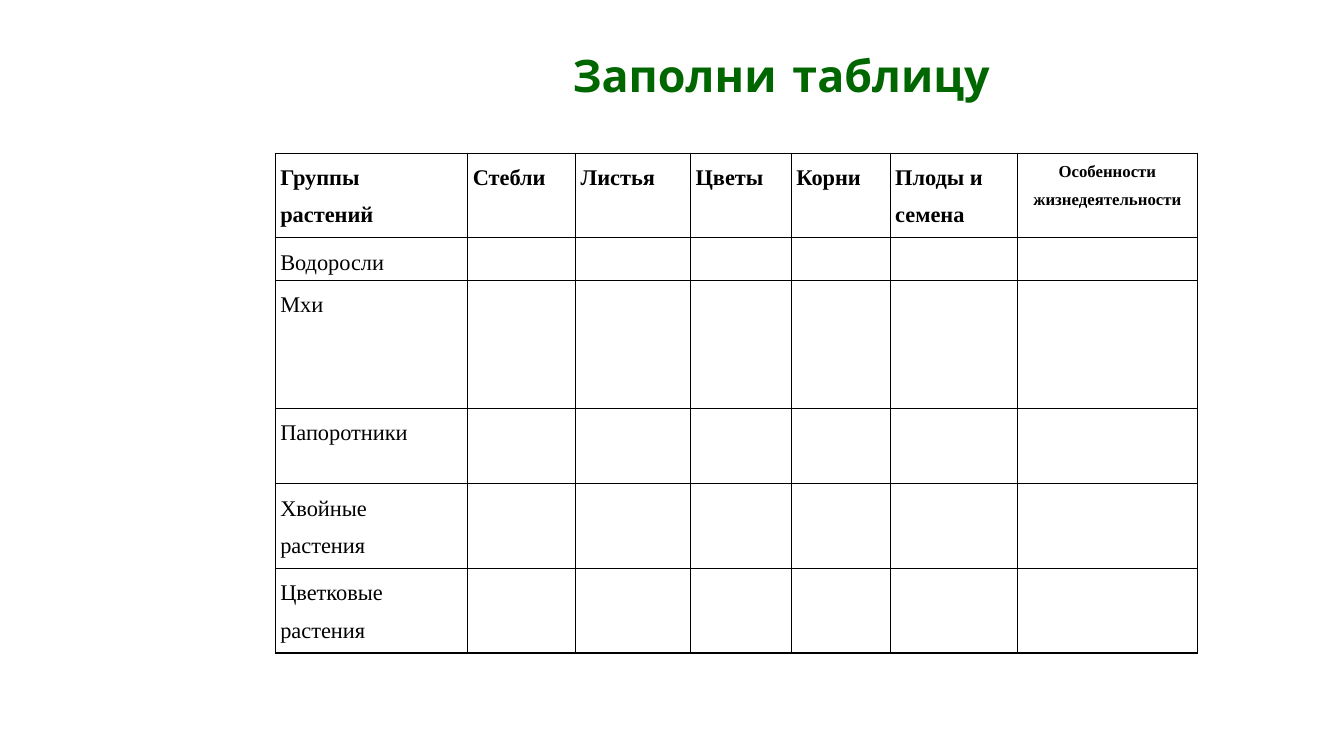
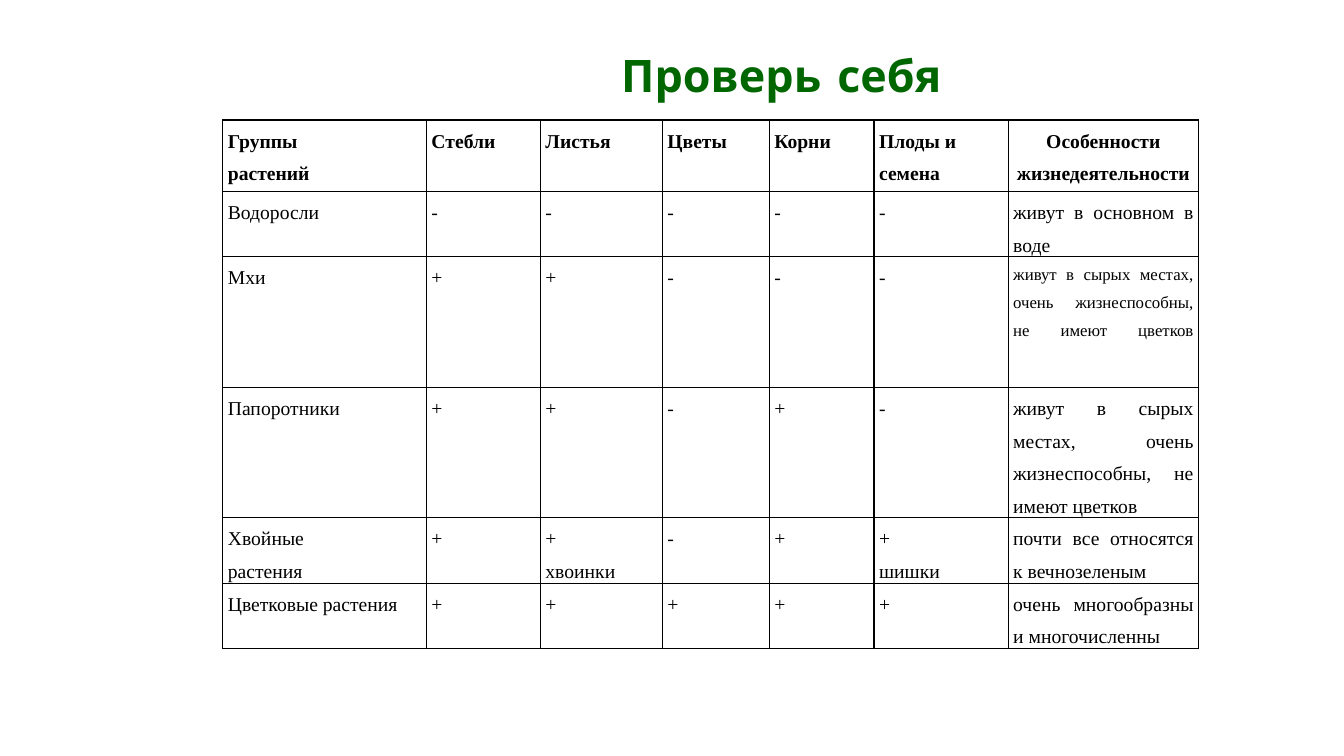
from lxml import etree
from pptx import Presentation
from pptx.dml.color import RGBColor
from pptx.enum.text import MSO_ANCHOR, MSO_AUTO_SIZE, PP_ALIGN
from pptx.oxml.ns import qn
from pptx.util import Inches, Pt

HEADINGS = ["Группы\nрастений", "Стебли", "Листья", "Цветы", "Корни",
            "Плоды и\nсемена", "Особенности жизнедеятельности"]
GROUPS = ["Водоросли", "Мхи", "Папоротники", "Хвойные\nрастения",
          "Цветковые растения"]
DAMP_PLACES = "живут в сырых местах, очень жизнеспособны, не имеют цветков"
ANSWERS = [
    ["-", "-", "-", "-", "-", "живут в основном в воде"],
    # The closing line break justifies the last line too
    ["+", "+", "-", "-", "-", DAMP_PLACES + "\v"],
    ["+", "+", "-", "+", "-", DAMP_PLACES],
    ["+", "+\nхвоинки", "-", "+", "+\nшишки",
     "почти все относятся к вечнозеленым"],
    ["+", "+", "+", "+", "+", "очень многообразны и многочисленны"],
]


def color(value):
    return RGBColor.from_string(value)


class Deck:
    """Holds the shared style and the current slide."""

    TITLE_FONT, TITLE_COLOR, TITLE_SIZE = "Comic Neue", "006600", 32
    TABLE_FONT, TEXT_COLOR, BORDER_COLOR = "Times New Roman", "000000", "000001"
    BACKGROUND = "FFFFFF"

    def __init__(self):
        self.presentation = Presentation()
        self.presentation.slide_width = Inches(13.33)
        self.presentation.slide_height = Inches(7.5)
        background = self.presentation.slide_master.background.fill
        background.solid()
        background.fore_color.rgb = color(self.BACKGROUND)
        self.slide = None

    def add_slide(self, title):
        layout = self.presentation.slide_layouts[5]
        self.slide = self.presentation.slides.add_slide(layout)
        self.place_title(title)

    def set_font(self, paragraph, name, size, rgb, bold):
        font = paragraph.font
        font.name, font.size, font.bold = name, Pt(size), bold
        font.color.rgb = color(rgb)

    def place_title(self, text):
        shape = self.slide.shapes.title
        shape.left, shape.top = Inches(4.13), Inches(0.45)
        shape.width, shape.height = Inches(7.24), Inches(0.98)
        frame = shape.text_frame
        frame.text = text
        frame.word_wrap = True
        frame.auto_size = MSO_AUTO_SIZE.NONE
        frame.vertical_anchor = MSO_ANCHOR.TOP
        frame.margin_top = Inches(0.02)
        paragraph = frame.paragraphs[0]
        paragraph.alignment = PP_ALIGN.CENTER
        self.set_font(paragraph, self.TITLE_FONT, self.TITLE_SIZE,
                      self.TITLE_COLOR, True)

    def add_table(self, left, top, widths, heights, rows, size, small_cells):
        """Draw a grid; small_cells lists the (row, column) set in 12 pt."""
        frame = self.slide.shapes.add_table(
            len(heights), len(widths), Inches(left), Inches(top),
            Inches(sum(widths)), Inches(sum(heights)))
        table = frame.table
        table.first_row = table.horz_banding = False
        for column, width in zip(table.columns, widths):
            column.width = Inches(width)
        for row, height in zip(table.rows, heights):
            row.height = Inches(height)
        for row_index, texts in enumerate(rows):
            for column_index, text in enumerate(texts):
                position = (row_index, column_index)
                self.fill_cell(table.cell(*position), text,
                               12 if position in small_cells else size,
                               heading=row_index == 0,
                               centered=position == (0, len(widths) - 1))

    def fill_cell(self, cell, text, size, heading, centered):
        cell.margin_left = cell.margin_right = Inches(0.05)
        cell.margin_top = cell.margin_bottom = 0
        self.add_borders(cell)
        cell.fill.background()
        if not text:
            return
        cell.text_frame.text = text
        for paragraph in cell.text_frame.paragraphs:
            paragraph.alignment = (PP_ALIGN.CENTER if centered
                                   else PP_ALIGN.JUSTIFY)
            paragraph.line_spacing = 1.5
            self.set_font(paragraph, self.TABLE_FONT, size,
                          self.TEXT_COLOR, heading)

    def add_borders(self, cell):
        properties = cell._tc.get_or_add_tcPr()
        for side in ("a:lnL", "a:lnR", "a:lnT", "a:lnB"):
            line = etree.SubElement(properties, qn(side), w=str(Pt(1)))
            fill = etree.SubElement(line, qn("a:solidFill"))
            etree.SubElement(fill, qn("a:srgbClr"), val=self.BORDER_COLOR)


def main():
    deck = Deck()

    # Empty table to fill in
    deck.add_slide("Заполни таблицу")
    blanks = [""] * (len(HEADINGS) - 1)
    deck.add_table(
        2.73, 1.52,
        widths=[1.91, 1.07, 1.14, 1, 0.98, 1.26, 1.79],
        heights=[0.84, 0.42, 1.27, 0.75, 0.84, 0.84],
        rows=[HEADINGS] + [[group] + blanks for group in GROUPS],
        size=16, small_cells=[(0, 6)])

    # Table with the answers
    deck.add_slide("Проверь себя")
    deck.add_table(
        2.21, 1.19,
        widths=[2.02, 1.13, 1.21, 1.06, 1.04, 1.33, 1.89],
        heights=[0.71, 0.64, 1.3, 1.29, 0.65, 0.64],
        rows=[HEADINGS] + [[group] + answers
                           for group, answers in zip(GROUPS, ANSWERS)],
        size=14, small_cells=[(2, 6)])

    deck.presentation.save("out.pptx")


if __name__ == "__main__":
    main()
